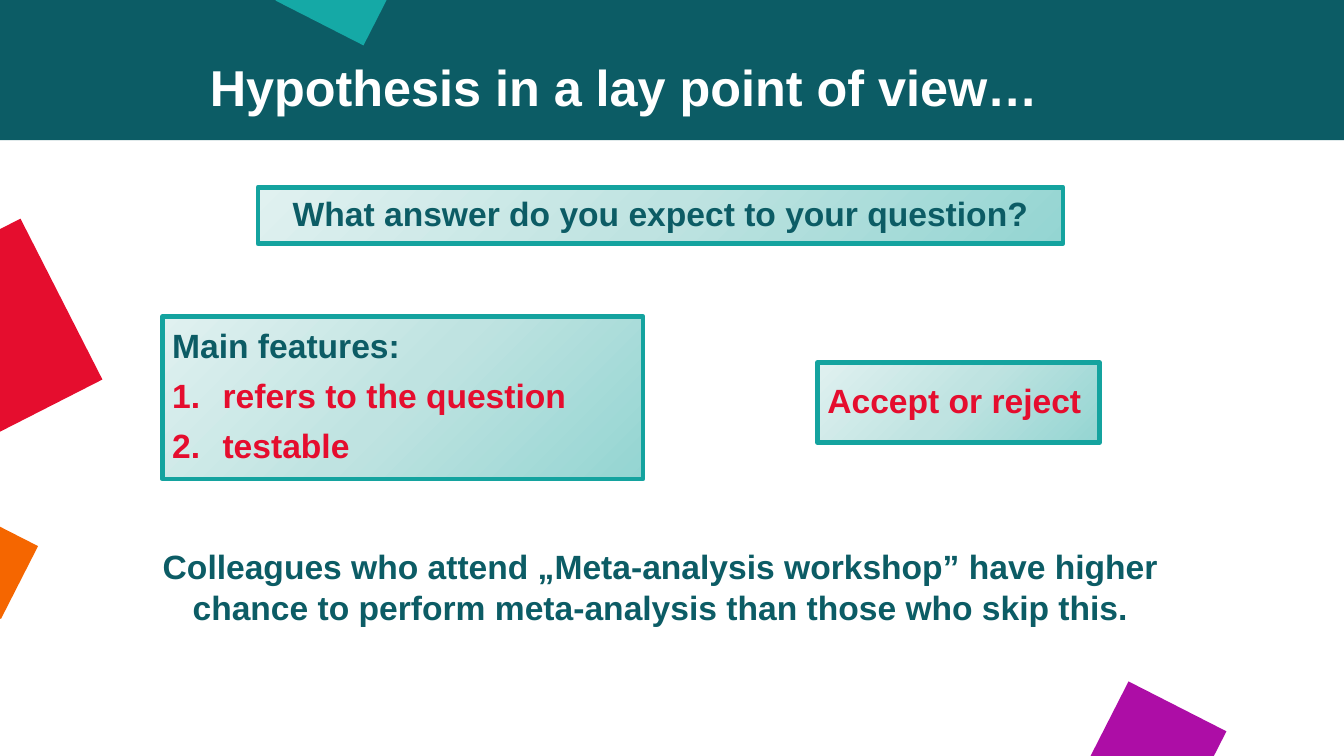
from copy import deepcopy

from lxml.etree import SubElement
from pptx import Presentation
from pptx.dml.color import RGBColor
from pptx.enum.shapes import MSO_SHAPE
from pptx.enum.text import MSO_ANCHOR, MSO_AUTO_SIZE, PP_ALIGN
from pptx.oxml.ns import qn
from pptx.util import Cm, Pt

COLORS = {
    "petrol": "0C5C65", "red": "E50D2E", "purple": "AD0DA6", "orange": "F56600",
    "teal": "15A9A6", "border": "14A39F", "white": "FFFFFF",
    "dark": "94D5D2", "middle": "BFE3E1", "light": "E0F1F0",
}


def rgb(name):
    """Return the named palette colour."""
    return RGBColor.from_string(COLORS[name])


def add_rect(s, box, fill=None, rotation=0):
    """Add a rectangle without line or shadow, plain filled if a colour is given."""
    sp = s.shapes.add_shape(MSO_SHAPE.RECTANGLE, *map(Cm, box))
    sp.shadow.inherit = False
    sp.rotation = rotation
    sp.line.fill.background()
    if fill:
        sp.fill.solid()
        sp.fill.fore_color.rgb = rgb(fill)
    return sp


def add_text(tf, text, size=24, color="petrol", align=PP_ALIGN.LEFT,
             spacing=0.9, before=0, numbered=False):
    """Write one formatted paragraph into a text frame."""
    p = tf.add_paragraph() if tf.text else tf.paragraphs[0]
    p.alignment, p.line_spacing, p.space_before = align, spacing, Pt(before)
    if numbered:
        pPr = p._p.get_or_add_pPr()
        pPr.set("marL", str(Cm(1.27)))
        pPr.set("indent", str(-Cm(1.27)))
        SubElement(pPr, qn("a:buFont"), typeface="+mj-lt")
        SubElement(pPr, qn("a:buAutoNum"), type="arabicPeriod")
    r = p.add_run()
    r.text = text
    r.font.name, r.font.size, r.font.bold = "Arial", Pt(size), True
    r.font.color.rgb = rgb(color)


def add_panel(s, box):
    """Add a bordered gradient panel and return its text frame."""
    sp = add_rect(s, box)
    sp.fill.gradient()
    sp.fill.gradient_angle = 135
    first = sp.fill.gradient_stops[0]._gs
    first.addnext(deepcopy(first))
    for stop, position, name in zip(sp.fill.gradient_stops, (0, 0.5, 1),
                                    ("dark", "middle", "light")):
        stop.position = position
        stop.color.rgb = rgb(name)
    sp.line.color.rgb = rgb("border")
    sp.line.width = Pt(3.25)
    tf = sp.text_frame
    tf.word_wrap = True
    tf.vertical_anchor = MSO_ANCHOR.MIDDLE
    return tf


def add_header(s, box):
    """Build the title band with its tilted square and title."""
    x, y, w, h = box
    add_rect(s, box, "petrol")
    add_rect(s, (x + 7.39, y - 1.85, 2.49, 2.57), "teal", 27)
    title = s.shapes.title
    title.left, title.top = Cm(x + 3.73), Cm(y + 1.45)
    title.width, title.height = Cm(24), Cm(1.04)
    tf = title.text_frame
    tf.word_wrap = True
    tf.auto_size = MSO_AUTO_SIZE.NONE
    tf.vertical_anchor = MSO_ANCHOR.TOP
    add_text(tf, "Hypothesis in a lay point of view…", size=36, color="white",
             align=PP_ALIGN.CENTER)
    s.shapes._spTree.append(title._element)


def add_decoration(s, box):
    """Place the tilted squares along the edges of the slide."""
    x, y, w, h = box
    add_rect(s, (x - 2.77, y + 6.3, 4.57, 4.55), "red", 333)
    add_rect(s, (x + w - 6.21, y + h - 1.4, 2.77, 2.77), "purple", 27)
    add_rect(s, (x - 1.55, y + 13.16, 2.16, 2.06), "orange", 27)


def add_body(s, box):
    """Build the question, the features, the verdict and the example."""
    x, y, w, h = box
    add_text(add_panel(s, (x + 2.74, y, 20.29, 1.42)),
             "What answer do you expect to your question?", align=PP_ALIGN.CENTER)

    features = add_panel(s, (x + 0.33, y + 3.26, 12.12, 4.09))
    add_text(features, "Main features:")
    for feature in ("refers to the question", "testable"):
        add_text(features, feature, color="red", before=10, numbered=True)

    add_text(add_panel(s, (x + 16.84, y + 4.42, 7.11, 2.01)),
             "Accept or reject", color="red")

    example = (x, y + h - 2.31, w, 2.31)
    tf = s.shapes.add_textbox(*map(Cm, example)).text_frame
    tf.word_wrap = True
    add_text(tf, "Colleagues who attend „Meta-analysis workshop” have higher chance "
             "to perform meta-analysis than those who skip this.",
             align=PP_ALIGN.CENTER, spacing=1.0)


def main():
    """Build and save the slide."""
    prs = Presentation()
    width, height = 33.87, 19.05
    prs.slide_width, prs.slide_height = Cm(width), Cm(height)
    s = prs.slides.add_slide(prs.slide_layouts[5])
    add_decoration(s, (0, 0, width, height))
    add_header(s, (0, 0, width, 3.53))
    add_body(s, (3.76, 4.72, 25.76, 11.23))
    prs.save("out.pptx")


if __name__ == "__main__":
    main()
